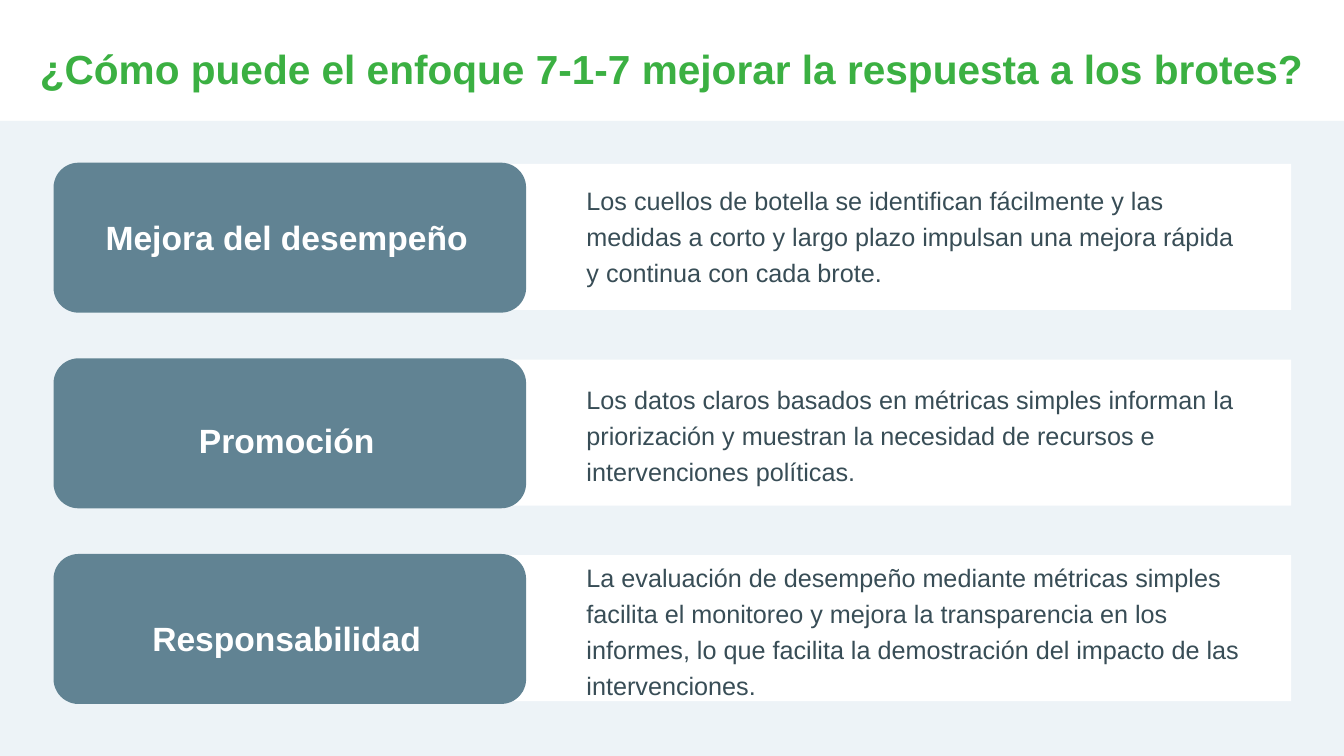
"""Build the slide on how the 7-1-7 approach improves outbreak response."""
import dataclasses

import pptx
import pptx.dml.color
import pptx.enum.shapes
import pptx.enum.text
import pptx.util

Cm = pptx.util.Cm
FORM = pptx.enum.shapes.MSO_SHAPE
ALIGN = pptx.enum.text.PP_ALIGN


@dataclasses.dataclass(frozen=True)
class Theme:
    """Colours, font and type sizes."""
    font: str = "Arial"
    green: str = "3BB042"
    pale: str = "EDF3F7"
    white: str = "FFFFFF"
    slate: str = "618393"
    ink: str = "384D56"
    head: int = 29
    label: int = 24
    body: int = 18


THEME = Theme()
WIDTH, HEIGHT = 33.87, 19.05
TOP, PITCH = 4.13, 4.93
ROWS = [
    ("Mejora del desempeño", (4.65, 2.46),
     "Los cuellos de botella se identifican fácilmente y las medidas a corto y largo "
     "plazo impulsan una mejora rápida y continua con cada brote.", (4.42, 2.92)),
    ("Promoción", (10.26, 1.45),
     "Los datos claros basados en métricas simples informan la priorización y muestran "
     "la necesidad de recursos e intervenciones políticas.", (9.63, 2.54)),
    ("Responsabilidad", (15.24, 1.45),
     "La evaluación de desempeño mediante métricas simples facilita el monitoreo y "
     "mejora la transparencia en los informes, lo que facilita la demostración del "
     "impacto de las intervenciones.", (14.22, 3.23)),
]


def tint(code):
    """Turn a hex code into a colour."""
    return pptx.dml.color.RGBColor.from_string(code)


def add_block(slide, form, box, color):
    """Add a flat filled shape."""
    block = slide.shapes.add_shape(form, *map(Cm, box))
    block.shadow.inherit = False
    block.fill.solid()
    block.fill.fore_color.rgb = tint(color)
    block.line.fill.background()


def add_text(slide, box, words, size, color, bold=False, align=ALIGN.CENTER, space=1.2):
    """Add one wrapped paragraph, centred in height."""
    frame = slide.shapes.add_textbox(*map(Cm, box)).text_frame
    frame.word_wrap = True
    frame.vertical_anchor = pptx.enum.text.MSO_ANCHOR.MIDDLE
    para = frame.paragraphs[0]
    para.alignment = align
    para.line_spacing = space
    run = para.add_run()
    run.text = words
    run.font.name = THEME.font
    run.font.size = pptx.util.Pt(size)
    run.font.bold = bold
    run.font.color.rgb = tint(color)


def add_row(slide, top, label, label_span, body, body_span):
    """Add a white card with its label block and both texts."""
    add_block(slide, FORM.RECTANGLE, (12.52, top, 20.02, 3.68), THEME.white)
    add_block(slide, FORM.ROUNDED_RECTANGLE, (1.35, top - 0.03, 11.91, 3.78), THEME.slate)
    label_top, label_high = label_span
    add_text(slide, (1.93, label_top, 10.59, label_high), label,
             THEME.label, THEME.white, bold=True)
    body_top, body_high = body_span
    add_text(slide, (14.53, body_top, 17.22, body_high), body,
             THEME.body, THEME.ink, align=ALIGN.LEFT)


def main():
    """Build and save the slide."""
    deck = pptx.Presentation()
    deck.slide_width, deck.slide_height = Cm(WIDTH), Cm(HEIGHT)
    slide = deck.slides.add_slide(deck.slide_layouts[6])
    add_block(slide, FORM.RECTANGLE, (0, 3.05, WIDTH, HEIGHT - 3.05), THEME.pale)
    for place, row in enumerate(ROWS):
        add_row(slide, TOP + place * PITCH, *row)
    add_text(slide, (0.56, 1.02, 32.77, 1.42),
             "¿Cómo puede el enfoque 7-1-7 mejorar la respuesta a los brotes?",
             THEME.head, THEME.green, bold=True, space=1.0)
    deck.save("out.pptx")


if __name__ == "__main__":
    main()
